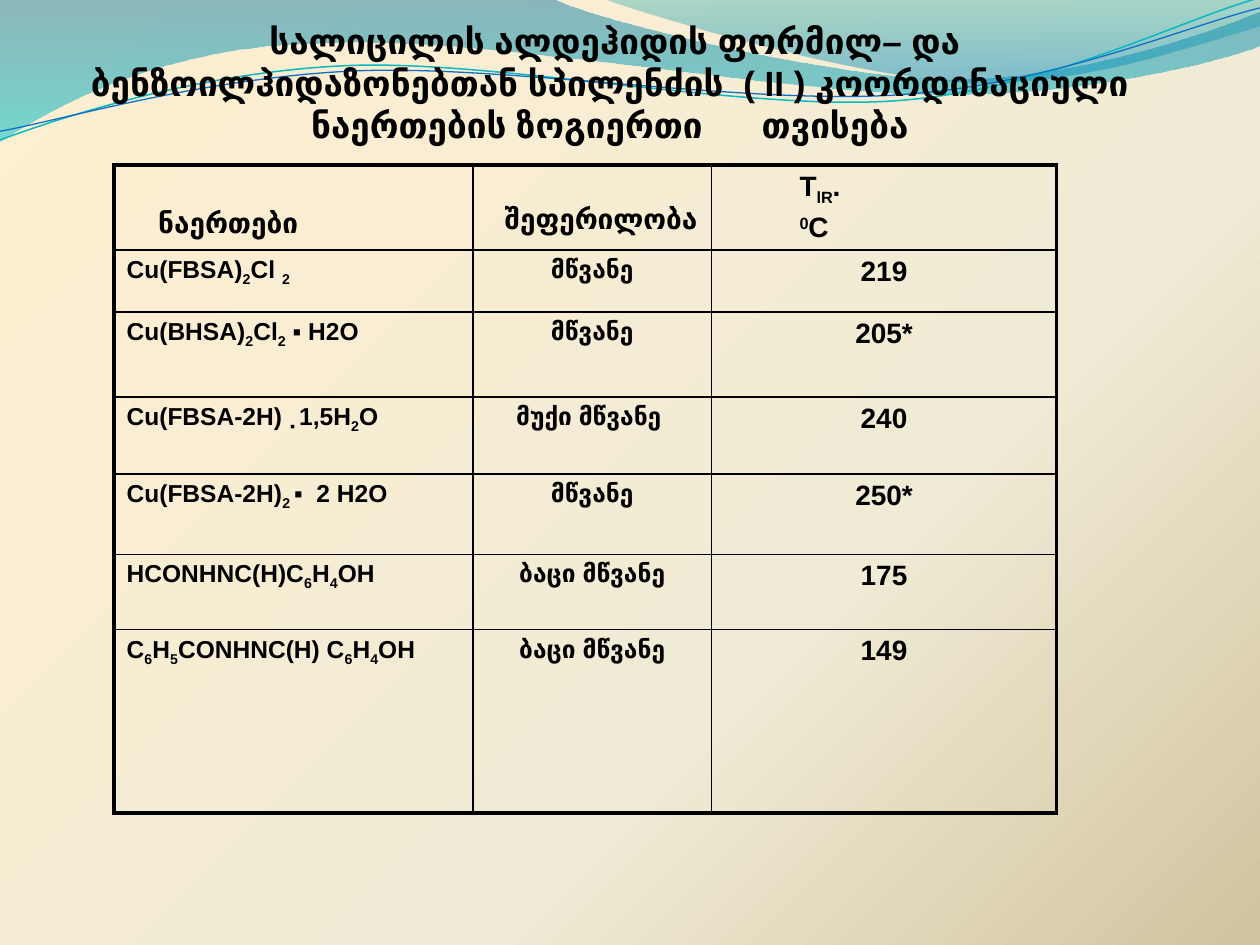
from lxml import etree
from pptx import Presentation
from pptx.dml.color import RGBColor
from pptx.enum.text import MSO_ANCHOR, PP_ALIGN
from pptx.oxml import parse_xml
from pptx.oxml.ns import nsdecls, qn
from pptx.util import Pt

LEFT, CENTER = PP_ALIGN.LEFT, PP_ALIGN.CENTER
BOTTOM = MSO_ANCHOR.BOTTOM
COLORS = {
    "ink": "000000", "cream": "FFEFD1", "ivory": "F0EBD5", "sand": "D1C39F",
    "ocean": "0074A1", "aqua": "00C6CF", "teal": "00A1A9", "sky": "008BBF",
    "cyan": "0AB8BF", "blue": "0F6FC6",
}

BROAD_WAVE = [
    [(0, 0)], [(317, -0.5)],
    [(343, 12), (478, 45), (546, 45)], [(614, 45), (690, 19), (720, 6.5)],
    [(720.5, 26)],
    [(708, 32), (626, 55), (537, 54)], [(448, 54), (275, 20), (185, 24.5)],
    [(93, 26), (33, 60), (-0.5, 81)], [(0, 0)],
]
CORNER_WAVE = [
    [(345, -0.5)], [(366, 8), (491, 45), (554, 47)],
    [(616, 50), (692, 23), (720, 15)], [(720, 0)], [(345, -0.5)],
]
CYAN_LINE = [
    [(0, 80)], [(35, 67), (114, 41), (199, 37.5)],
    [(284, 34), (427, 64), (513, 57.5)], [(600, 51), (675, 11), (719, -1)],
]
BLUE_LINE = [
    [(0, 75)], [(34, 69), (118, 44), (204, 40.5)],
    [(290, 37), (430, 60.5), (516, 54)], [(602, 48), (677.5, 15), (720, 4.5)],
]

TITLE = [
    ("სალიცილის ალდეჰიდის ფორმილ– და ბენზოილჰიდაზონებთან სპილენძის  "
     "( II ) კოორდინაციული  ნაერთების ზოგიერთი", 0),
    (" ", 28), ("თვისება ", 0),
]
COMPOUNDS = [
    ("Cu(FBSA)_2_Cl _2", "მწვანე", "219"),
    ("Cu(BHSA)_2_Cl_2_ ▪ H2O", "მწვანე", "205*"),
    ("Cu(FBSA-2H)_  ▪ _1,5H_2_O", "მუქი მწვანე ", "240"),
    ("Cu(FBSA-2H)_2 _▪  2 H2O", "მწვანე", "250*"),
    ("HCONHNC(H)C_6_H_4_OH", "ბაცი მწვანე", "175"),
    ("C_6_H_5_CONHNC(H) C_6_H_4_OH", "ბაცი მწვანე", "149"),
]
COLUMN_STYLES = [(14, LEFT), (14, CENTER), (16, CENTER)]
COLUMN_WIDTHS = [205, 136.5, 197]
ROW_HEIGHTS = [48.5, 35.5, 48.5, 44, 46, 43, 105]


class SlideBuilder:
    font = "Arial"

    def __init__(self, slide):
        self.slide = slide

    def gradient(self, fill, owner, stops, angle):
        fill.solid()
        solid = owner.find(".//" + qn("a:solidFill"))
        gradient = etree.Element(qn("a:gradFill"), rotWithShape="1")
        stop_list = etree.SubElement(gradient, qn("a:gsLst"))
        for position, color, opacity in stops:
            stop = etree.SubElement(stop_list, qn("a:gs"), pos=str(position * 1000))
            rgb = etree.SubElement(stop, qn("a:srgbClr"), val=COLORS[color])
            if opacity < 100:
                etree.SubElement(rgb, qn("a:alpha"), val=str(opacity * 1000))
        etree.SubElement(gradient, qn("a:lin"), ang=str(angle * 60000), scaled="0")
        solid.getparent().replace(solid, gradient)

    def background(self, stops, angle):
        self.gradient(self.slide.background.fill, self.slide._element, stops, angle)

    def outline(self, segments, close):
        points = [(Pt(x), Pt(y)) for segment in segments for x, y in segment]
        builder = self.slide.shapes.build_freeform(*points[0], scale=1.0)
        builder.add_line_segments(points[1:], close=close)
        shape = builder.convert_to_shape()
        shape.shadow.inherit = False
        lines = iter(shape._element.findall(".//" + qn("a:lnTo")))
        for segment in segments[1:]:
            if len(segment) == 3:
                group = [next(lines) for _ in segment]
                curve = etree.Element(qn("a:cubicBezTo"))
                group[0].addprevious(curve)
                for line in group:
                    curve.append(line[0])
                    line.getparent().remove(line)
            else:
                next(lines)
        return shape

    def wave(self, segments, stops):
        shape = self.outline(segments, True)
        self.gradient(shape.fill, shape._element, stops, 90)
        shape.line.fill.background()

    def curve(self, segments, color, width):
        shape = self.outline(segments, False)
        shape.fill.background()
        shape.line.color.rgb = RGBColor.from_string(COLORS[color])
        shape.line.width = Pt(width)

    def run(self, paragraph, text, size, shift=0, spacing=0):
        run = paragraph.add_run()
        run.text = text
        run.font.name = self.font
        run.font.size = Pt(size)
        run.font.bold = True
        run.font.color.rgb = RGBColor.from_string(COLORS["ink"])
        if shift:
            run.font._element.set("baseline", str(shift * 1000))
        if spacing:
            run.font._element.set("spc", str(spacing * 100))

    def formula(self, paragraph, text, size, align=LEFT, shift=-25, indent=0):
        paragraph.alignment = align
        paragraph._p.get_or_add_pPr().set("marL", str(Pt(indent)))
        for index, part in enumerate(text.split("_")):
            if part:
                self.run(paragraph, part, size, shift * (index % 2))

    def title(self, runs, left, top, width, height):
        frame = self.slide.shapes.add_textbox(Pt(left), Pt(top), Pt(width), Pt(height)).text_frame
        frame.word_wrap = True
        frame.vertical_anchor = BOTTOM
        frame.margin_left = frame.margin_right = frame.margin_bottom = 0
        paragraph = frame.paragraphs[0]
        paragraph.alignment = CENTER
        for text, spacing in runs:
            self.run(paragraph, text, 20, spacing=spacing)

    def borders(self, cell, **widths):
        properties = cell._tc.get_or_add_tcPr()
        for index, (side, width) in enumerate(widths.items()):
            properties.insert(index, parse_xml(
                f'<a:ln{side} {nsdecls("a")} w="{Pt(width)}"><a:solidFill>'
                f'<a:srgbClr val="{COLORS["ink"]}"/></a:solidFill></a:ln{side}>'))

    def table(self, left, top, widths, heights):
        table = self.slide.shapes.add_table(
            len(heights), len(widths), Pt(left), Pt(top),
            Pt(sum(widths)), Pt(sum(heights))).table
        table.first_row = table.horz_banding = False
        for column, width in zip(table.columns, widths):
            column.width = Pt(width)
        last_row, last_column = len(heights) - 1, len(widths) - 1
        for r, height in enumerate(heights):
            table.rows[r].height = Pt(height)
            for c in range(len(widths)):
                cell = table.cell(r, c)
                cell.fill.background()
                self.borders(
                    cell,
                    L=2.25 if c == 0 else 1, R=2.25 if c == last_column else 1,
                    T=2.25 if r == 0 else 1, B=2.25 if r == last_row else 1)
        return table


def main():
    deck = Presentation()
    deck.slide_width, deck.slide_height = Pt(720), Pt(540)
    page = SlideBuilder(deck.slides.add_slide(deck.slide_layouts[6]))

    page.background([(0, "cream", 100), (65, "ivory", 100), (100, "sand", 100)], 45)
    page.wave(BROAD_WAVE, [(0, "ocean", 45), (100, "aqua", 55)])
    page.wave(CORNER_WAVE, [(0, "teal", 30), (80, "sky", 45)])
    page.curve(CYAN_LINE, "cyan", 0.85)
    page.curve(BLUE_LINE, "blue", 0.75)
    page.title(TITLE, 36.5, 0, 629.5, 83)

    table = page.table(65.2, 94.3, COLUMN_WIDTHS, ROW_HEIGHTS)
    compound, color, temperature = table.rows[0].cells
    compound.vertical_anchor = color.vertical_anchor = BOTTOM
    compound.margin_bottom = Pt(6)
    color.margin_bottom = Pt(8.5)
    color.margin_right = temperature.margin_bottom = 0
    page.formula(compound.text_frame.paragraphs[0], "ნაერთები", 16, indent=18)
    page.formula(color.text_frame.paragraphs[0], "შეფერილობა", 16, indent=11)
    page.formula(temperature.text_frame.paragraphs[0], "T_lR_.", 16, indent=43)
    degrees = temperature.text_frame.add_paragraph()
    degrees.space_before = Pt(3)
    page.formula(degrees, "_0_C", 16, shift=30, indent=43)

    for r, values in enumerate(COMPOUNDS, 1):
        for c, (value, (size, align)) in enumerate(zip(values, COLUMN_STYLES)):
            page.formula(table.cell(r, c).text_frame.paragraphs[0], value, size, align)

    deck.save("out.pptx")


if __name__ == "__main__":
    main()
